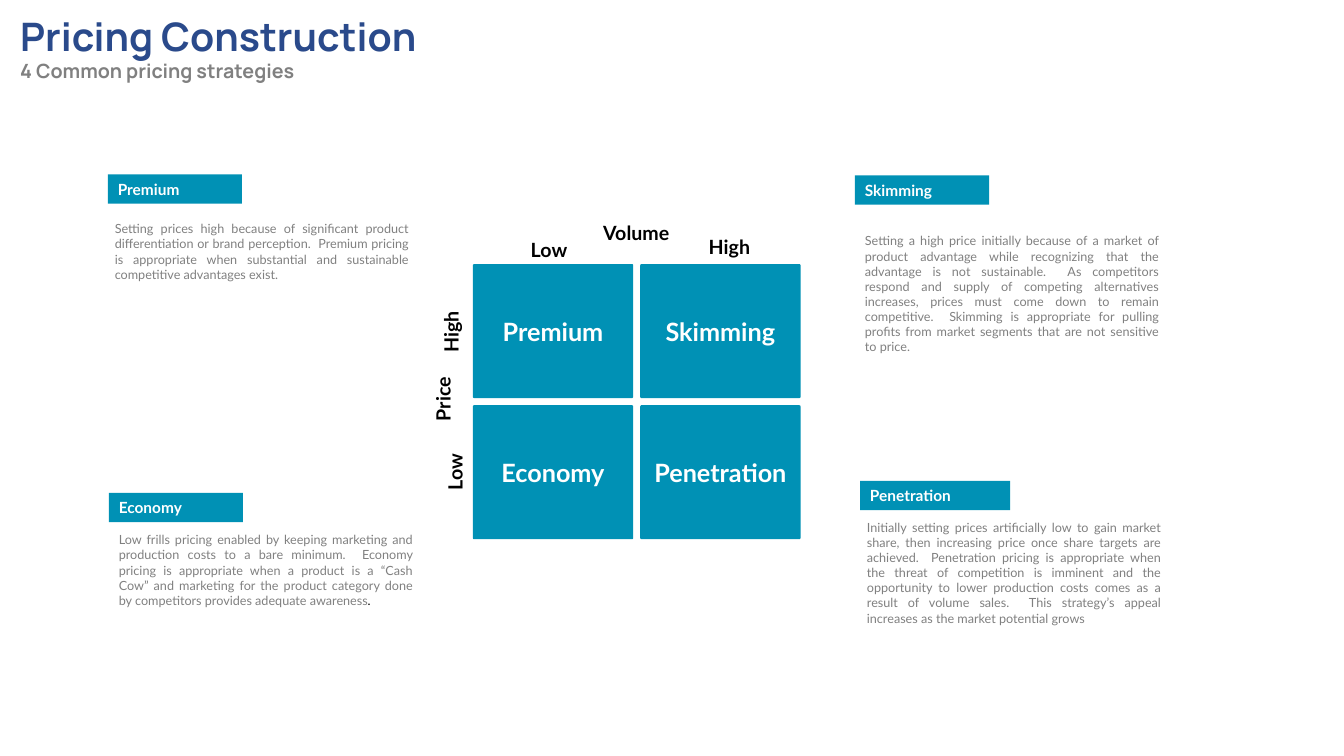
import pptx
import pptx.util
import pptx.dml.color
import pptx.enum.shapes
import pptx.enum.text

Inches = pptx.util.Inches
Align = pptx.enum.text.PP_ALIGN
Anchor = pptx.enum.text.MSO_ANCHOR
Shapes = pptx.enum.shapes.MSO_SHAPE

THEME = {
    "teal": "0091B5", "navy": "2A4A8B", "gray": "808080", "white": "FFFFFF", "black": "000000",
    "body_font": "Lato", "title_font": "Manrope",
    "title": 28, "subtitle": 14, "cell": 18, "axis": 14, "tag": 11, "note": 9,
}

HEADING = "Pricing Construction"
SUBHEADING = "4 Common pricing strategies"
MATRIX = [["Premium", "Skimming"], ["Economy", "Penetration"]]
AXIS_LABELS = [
    ("Low", (4.94, 2.31, 1.01, 0.34), 0),
    ("High", (6.73, 2.28, 1.01, 0.34), 0),
    ("Volume ", (5.83, 2.14, 1.01, 0.34), 0),
    ("High", (4.04, 3.12, 0.87, 0.34), 270),
    ("Price", (3.96, 3.79, 0.87, 0.34), 270),
    ("Low", (4.08, 4.51, 0.87, 0.34), 270),
]
STRATEGIES = [
    {
        "name": "Premium", "tag": (1.07, 1.73, 1.33, 0.29), "note": (1.04, 1.68, 3.11, 1.63),
        "runs": [("Setting prices high because of significant product differentiation or brand "
                  "perception.  Premium pricing is appropriate when substantial and sustainable "
                  "competitive advantages exist.", "gray")],
    },
    {
        "name": "Economy", "tag": (1.08, 4.89, 1.33, 0.29), "note": (1.08, 4.84, 3.11, 1.63),
        "runs": [("Low frills pricing enabled by keeping marketing and production costs to a bare "
                  "minimum.  Economy pricing is appropriate when a product is a “Cash Cow” and "
                  "marketing for the product category done by competitors provides adequate "
                  "awareness", "gray"), (".", "black")],
    },
    {
        "name": "Skimming", "tag": (8.48, 1.74, 1.33, 0.29), "note": (8.48, 1.63, 3.11, 2.09),
        "top_inset": 0.53,
        "runs": [("Setting a high price initially because of a market of product advantage while "
                  "recognizing that the advantage is not sustainable.  As competitors respond and "
                  "supply of competing alternatives increases, prices must come down to remain "
                  "competitive.  Skimming is appropriate for pulling profits from market segments "
                  "that are not sensitive to price.", "gray")],
    },
    {
        "name": "Penetration", "tag": (8.53, 4.77, 1.49, 0.29), "note": (8.5, 4.66, 3.11, 2.04),
        "runs": [("Initially setting prices artificially low to gain market share, then increasing "
                  "price once share targets are achieved.  Penetration pricing is appropriate when "
                  "the threat of competition is imminent and the opportunity to lower production "
                  "costs comes as a result of volume sales.  This strategy’s appeal increases as "
                  "the market potential grows", "gray")],
    },
]

MATRIX_LEFT, MATRIX_TOP = 4.69, 2.62
CELL_WIDTH, CELL_HEIGHT = 1.59, 1.33
CELL_GAP = 0.07


def set_values(target, values):
    for name, value in values.items():
        setattr(target, name, value)


def color(name):
    return pptx.dml.color.RGBColor.from_string(THEME[name])


def write(paragraph, runs, size, bold=True, font="body_font", align=Align.LEFT):
    paragraph.alignment = align
    for text, color_name in runs:
        run = paragraph.add_run()
        run.text = text
        set_values(run.font, {"name": THEME[font], "size": pptx.util.Pt(THEME[size]), "bold": bold})
        run.font.color.rgb = color(color_name)


def set_frame(shape, anchor=Anchor.MIDDLE, **margins):
    values = {"word_wrap": True, "auto_size": pptx.enum.text.MSO_AUTO_SIZE.NONE,
              "vertical_anchor": anchor}
    set_values(shape.text_frame, {**values, **margins})
    return shape.text_frame.paragraphs[0]


def add_block(slide, kind, box, fill):
    shape = slide.shapes.add_shape(kind, *map(Inches, box))
    shape.shadow.inherit = False
    shape.fill.solid()
    shape.fill.fore_color.rgb = color(fill)
    shape.line.fill.background()
    return shape


def add_title(slide):
    title = slide.shapes.title
    set_values(title, {"left": Inches(0.1), "top": Inches(0.07),
                       "width": Inches(10.53), "height": Inches(0.81)})
    write(set_frame(title, Anchor.TOP), [(HEADING, "navy")], "title", font="title_font")
    write(title.text_frame.add_paragraph(), [(SUBHEADING, "gray")], "subtitle", font="title_font")


def add_matrix(slide):
    for row, names in enumerate(MATRIX):
        for column, name in enumerate(names):
            left = MATRIX_LEFT + column * (CELL_WIDTH + CELL_GAP)
            top = MATRIX_TOP + row * (CELL_HEIGHT + CELL_GAP)
            cell = add_block(slide, Shapes.ROUNDED_RECTANGLE,
                             (left, top, CELL_WIDTH, CELL_HEIGHT), "teal")
            cell.adjustments[0] = 0.01
            paragraph = set_frame(cell, margin_left=0, margin_right=0, margin_top=0, margin_bottom=0)
            write(paragraph, [(name, "white")], "cell", align=Align.CENTER)
    for text, box, rotation in AXIS_LABELS:
        label = slide.shapes.add_textbox(*map(Inches, box))
        label.rotation = rotation
        write(set_frame(label, Anchor.TOP), [(text, "black")], "axis", align=Align.CENTER)


def add_strategy(slide, strategy):
    note = add_block(slide, Shapes.RECTANGLE, strategy["note"], "white")
    paragraph = set_frame(note, margin_top=Inches(strategy.get("top_inset", 0.05)))
    write(paragraph, strategy["runs"], "note", bold=False, align=Align.JUSTIFY)
    tag = add_block(slide, Shapes.RECTANGLE, strategy["tag"], "teal")
    write(set_frame(tag), [(strategy["name"], "white")], "tag")


def main():
    presentation = pptx.Presentation()
    set_values(presentation, {"slide_width": Inches(13.33), "slide_height": Inches(7.5)})
    slide = presentation.slides.add_slide(presentation.slide_layouts[5])
    add_title(slide)
    add_matrix(slide)
    for strategy in STRATEGIES:
        add_strategy(slide, strategy)
    presentation.save("out.pptx")


if __name__ == "__main__":
    main()
